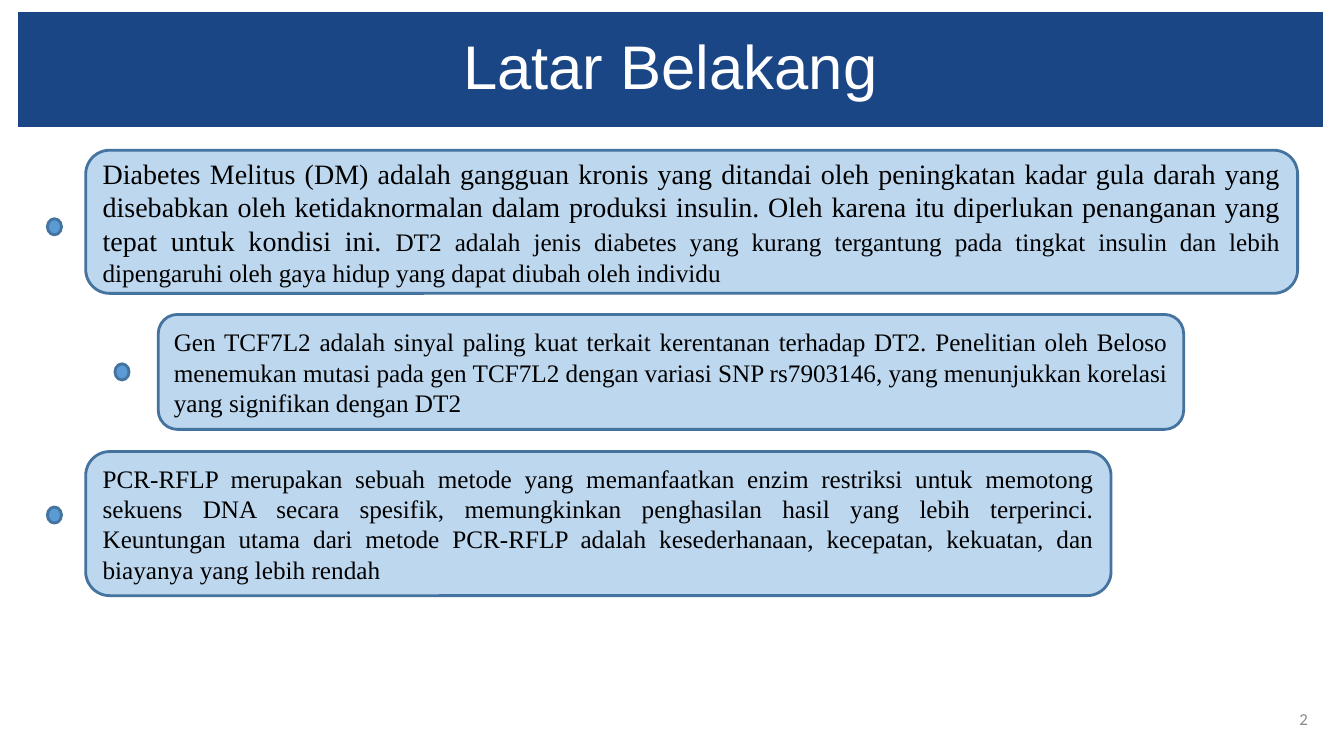
from dataclasses import dataclass

from pptx import Presentation
from pptx.dml.color import RGBColor
from pptx.enum.shapes import MSO_SHAPE
from pptx.enum.text import MSO_ANCHOR, MSO_AUTO_SIZE, PP_ALIGN
from pptx.util import Inches, Pt

OVAL = MSO_SHAPE.OVAL
ROUND = MSO_SHAPE.ROUNDED_RECTANGLE
MIDDLE = MSO_ANCHOR.MIDDLE
FIXED = MSO_AUTO_SIZE.NONE
CENTER = PP_ALIGN.CENTER
RIGHT = PP_ALIGN.RIGHT
JUSTIFY = PP_ALIGN.JUSTIFY


@dataclass(frozen=True)
class Theme:
    banner: str = "1B4685"
    panel: str = "BDD7EE"
    dot: str = "5B9BD5"
    edge: str = "43739E"
    white: str = "FFFFFF"
    ink: str = "000000"
    gray: str = "888888"
    head_font: str = "Arial"
    body_font: str = "Times New Roman"
    page_font: str = "Calibri"
    head: int = 44
    lead: int = 20
    body: int = 18
    page: int = 12
    line: int = 2


THEME = Theme()

POINTS = [
    ((0.85, 1.49, 12.02, 1.42), (0.47, 2.17), [
        ("Diabetes Melitus (DM) adalah gangguan kronis yang ditandai oleh "
         "peningkatan kadar gula darah yang disebabkan oleh ketidaknormalan "
         "dalam produksi insulin. Oleh karena itu diperlukan penanganan yang "
         "tepat untuk kondisi ini. ", THEME.lead),
        ("DT2 adalah jenis diabetes yang kurang tergantung pada tingkat "
         "insulin dan lebih dipengaruhi oleh gaya hidup yang dapat diubah "
         "oleh individu", THEME.body),
    ]),
    ((1.57, 3.12, 10.17, 1.14), (1.14, 3.61), [
        ("Gen TCF7L2 adalah sinyal paling kuat terkait kerentanan terhadap "
         "DT2. Penelitian oleh Beloso menemukan mutasi pada gen TCF7L2 dengan "
         "variasi SNP rs7903146, yang menunjukkan korelasi yang signifikan "
         "dengan DT2", THEME.body),
    ]),
    ((0.85, 4.48, 10.17, 1.43), (0.47, 5.03), [
        ("PCR-RFLP merupakan sebuah metode yang memanfaatkan enzim restriksi "
         "untuk memotong sekuens DNA secara spesifik, memungkinkan penghasilan "
         "hasil yang lebih terperinci. Keuntungan utama dari metode PCR-RFLP "
         "adalah kesederhanaan, kecepatan, kekuatan, dan biayanya yang lebih "
         "rendah", THEME.body),
    ]),
]


def paint(shape, color):
    shape.fill.solid()
    shape.fill.fore_color.rgb = RGBColor.from_string(color)


def style(run, name, size, color):
    run.font.name = name
    run.font.size = Pt(size)
    run.font.color.rgb = RGBColor.from_string(color)


def set_frame(shape):
    frame = shape.text_frame
    frame.word_wrap = True
    frame.auto_size = FIXED
    frame.vertical_anchor = MIDDLE
    return frame


def add_title(slide, text):
    title = slide.shapes.title
    title.left, title.top = Inches(0.18), Inches(0.12)
    title.width, title.height = Inches(12.94), Inches(1.14)
    paint(title, THEME.banner)
    frame = set_frame(title)
    frame.text = text
    para = frame.paragraphs[0]
    para.alignment = CENTER
    para.line_spacing = 0.9
    style(para.runs[0], THEME.head_font, THEME.head, THEME.white)


def add_form(slide, kind, box, color):
    form = slide.shapes.add_shape(kind, *map(Inches, box))
    form.shadow.inherit = False
    paint(form, color)
    form.line.color.rgb = RGBColor.from_string(THEME.edge)
    form.line.width = Pt(THEME.line)
    return form


def add_point(slide, box, spot, parts):
    add_form(slide, OVAL, (*spot, 0.14, 0.16), THEME.dot)
    panel = add_form(slide, ROUND, box, THEME.panel)
    para = set_frame(panel).paragraphs[0]
    para.alignment = JUSTIFY
    for text, size in parts:
        run = para.add_run()
        run.text = text
        style(run, THEME.body_font, size, THEME.ink)


def add_page(slide, text):
    box = slide.shapes.add_textbox(*map(Inches, (12.5, 6.93, 0.57, 0.4)))
    frame = set_frame(box)
    frame.text = text
    para = frame.paragraphs[0]
    para.alignment = RIGHT
    style(para.runs[0], THEME.page_font, THEME.page, THEME.gray)


def main():
    deck = Presentation()
    deck.slide_width, deck.slide_height = Inches(13.33), Inches(7.5)
    slide = deck.slides.add_slide(deck.slide_layouts[5])
    add_title(slide, "Latar Belakang")
    for box, spot, parts in POINTS:
        add_point(slide, box, spot, parts)
    add_page(slide, "2")
    deck.save("out.pptx")


if __name__ == "__main__":
    main()
